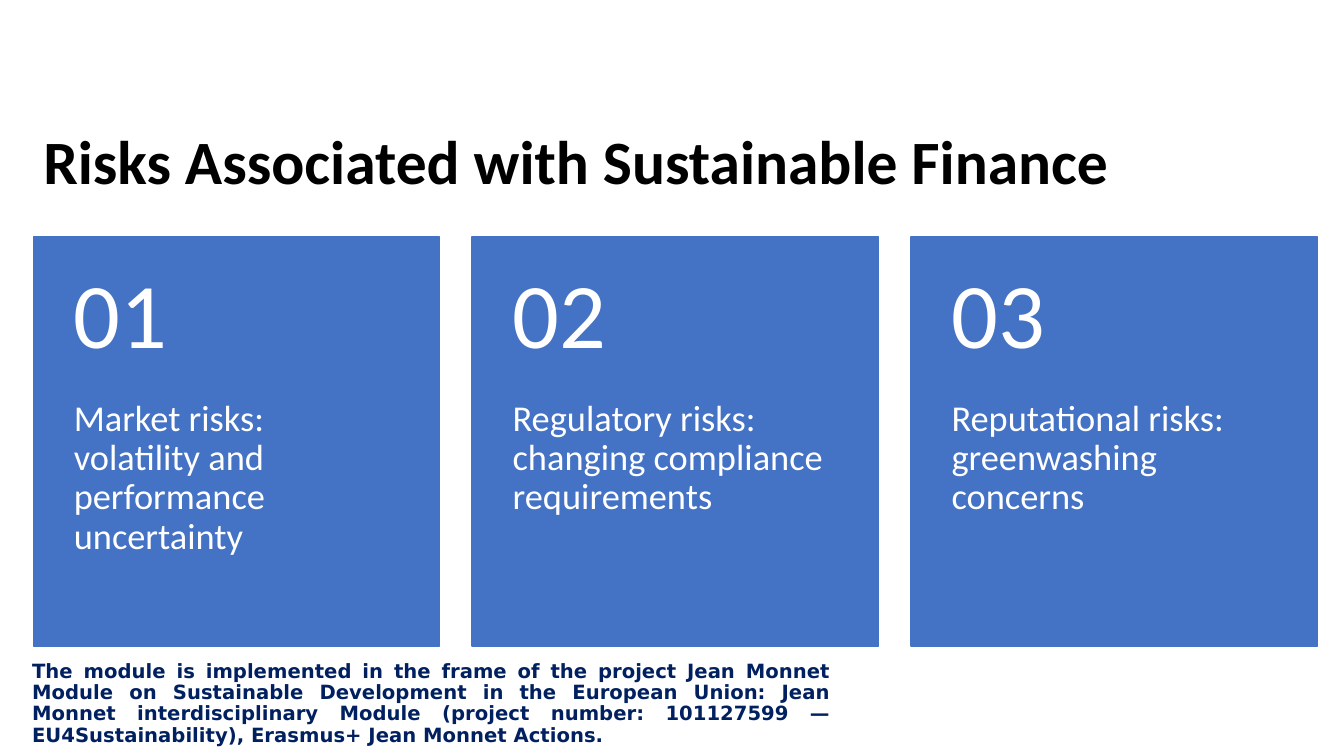
from pptx import Presentation
from pptx.dml.color import RGBColor
from pptx.enum.shapes import MSO_SHAPE
from pptx.enum.text import MSO_ANCHOR, MSO_AUTO_SIZE, PP_ALIGN
from pptx.util import Cm, Pt

TITLE = "Risks Associated with Sustainable Finance"
RISKS = [
    "Market risks: volatility and performance uncertainty",
    "Regulatory risks: changing compliance requirements",
    "Reputational risks: greenwashing concerns",
]
FOOTER = (
    "The module is implemented in the frame of the project Jean Monnet Module "
    "on Sustainable Development in the European Union: Jean Monnet "
    "interdisciplinary Module (project number: 101127599 — "
    "EU4Sustainability), Erasmus+ Jean Monnet Actions."
)

BLACK = RGBColor(0x00, 0x00, 0x00)
WHITE = RGBColor(0xFF, 0xFF, 0xFF)
BLUE = RGBColor(0x44, 0x72, 0xC4)
NAVY = RGBColor(0x00, 0x20, 0x60)
RECTANGLE = MSO_SHAPE.RECTANGLE
TOP, MIDDLE = MSO_ANCHOR.TOP, MSO_ANCHOR.MIDDLE
LEFT, JUSTIFY = PP_ALIGN.LEFT, PP_ALIGN.JUSTIFY
NO_AUTO_SIZE = MSO_AUTO_SIZE.NONE

CARD_LEFT, CARD_TOP = 0.84, 5.97
CARD_WIDTH, CARD_HEIGHT = 10.24, 10.31
CARD_PITCH = 11.06
NUMBER_HEIGHT = 4.11
DEFAULT_INSETS = (0.25, 0.13, 0.25, 0.13)
NUMBER_INSETS = (1.02, 0.46, 1.02, 0.46)
RISK_INSETS = (1.02, 0, 1.02, 0.91)


def write(shape, text, size, color, font="Calibri", bold=False,
          align=LEFT, anchor=TOP, insets=DEFAULT_INSETS):
    frame = shape.text_frame
    frame.word_wrap = True
    frame.auto_size = NO_AUTO_SIZE
    frame.vertical_anchor = anchor
    (frame.margin_left, frame.margin_top,
     frame.margin_right, frame.margin_bottom) = map(Cm, insets)
    paragraph = frame.paragraphs[0]
    paragraph.alignment = align
    paragraph.line_spacing = 0.9
    run = paragraph.add_run()
    run.text = text
    run.font.name = font
    run.font.size = Pt(size)
    run.font.bold = bold
    run.font.color.rgb = color


def add_card(slide, index, risk):
    left = CARD_LEFT + index * CARD_PITCH
    card = slide.shapes.add_shape(
        RECTANGLE, Cm(left), Cm(CARD_TOP), Cm(CARD_WIDTH), Cm(CARD_HEIGHT))
    card.shadow.inherit = False
    card.fill.solid()
    card.fill.fore_color.rgb = BLUE
    card.line.color.rgb = BLUE
    card.line.width = Pt(1)

    number_box = slide.shapes.add_textbox(
        Cm(left), Cm(CARD_TOP), Cm(CARD_WIDTH), Cm(NUMBER_HEIGHT))
    write(number_box, f"{index + 1:02}", 66, WHITE,
          anchor=MIDDLE, insets=NUMBER_INSETS)
    risk_box = slide.shapes.add_textbox(
        Cm(left), Cm(CARD_TOP + NUMBER_HEIGHT),
        Cm(CARD_WIDTH), Cm(CARD_HEIGHT - NUMBER_HEIGHT))
    write(risk_box, risk, 26, WHITE, insets=RISK_INSETS)


def main():
    presentation = Presentation()
    presentation.slide_width, presentation.slide_height = Cm(33.87), Cm(19.05)
    slide = presentation.slides.add_slide(presentation.slide_layouts[5])

    title = slide.shapes.title
    title.left, title.top = Cm(0.84), Cm(2.77)
    title.width, title.height = Cm(30.18), Cm(2.74)
    write(title, TITLE, 44, BLACK, bold=True, anchor=MIDDLE)

    for index, risk in enumerate(RISKS):
        add_card(slide, index, risk)

    footer = slide.shapes.add_textbox(Cm(0.56), Cm(16.54), Cm(20.62), Cm(2.51))
    write(footer, FOOTER, 14, NAVY, font="DejaVu Sans", bold=True, align=JUSTIFY)

    presentation.save("out.pptx")


if __name__ == "__main__":
    main()
